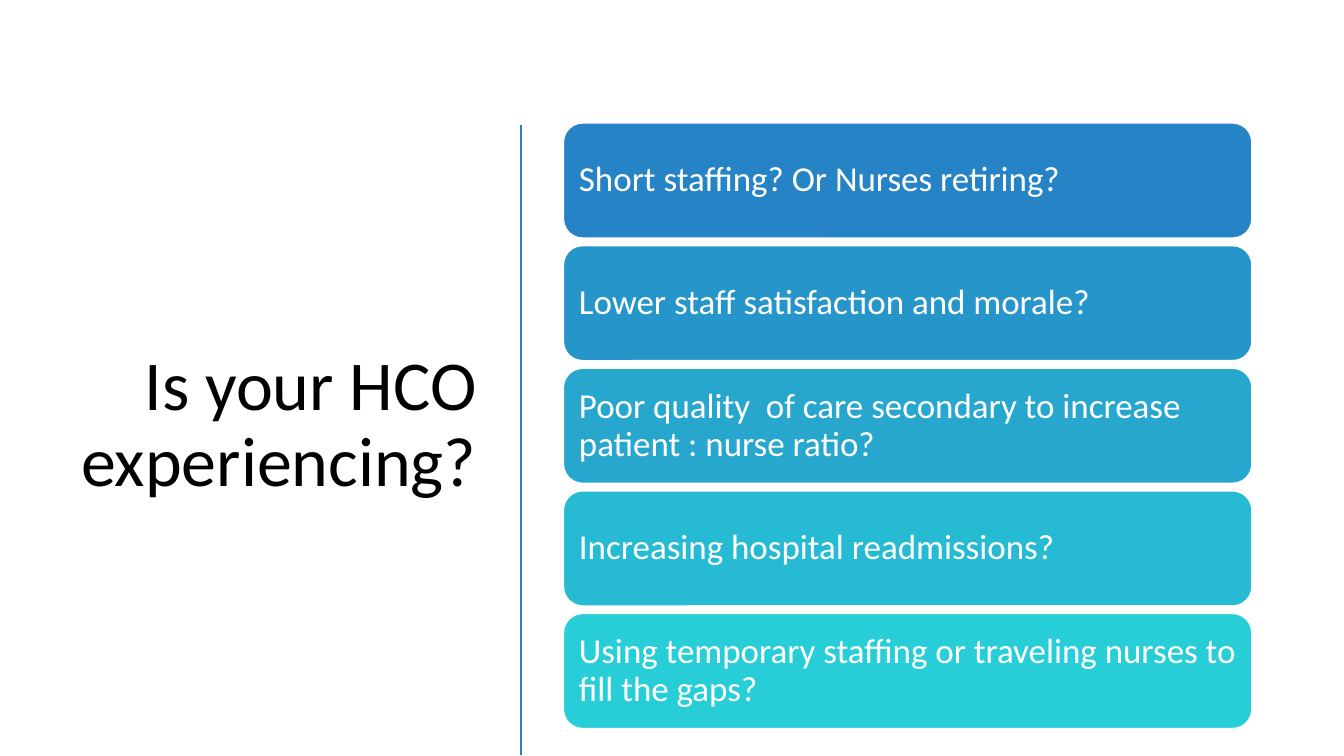
from dataclasses import dataclass

from lxml.etree import SubElement
from pptx import Presentation
from pptx.dml.color import RGBColor
from pptx.enum.shapes import MSO_CONNECTOR, MSO_SHAPE
from pptx.enum.text import MSO_ANCHOR as Anchor, PP_ALIGN as Align
from pptx.oxml.ns import qn
from pptx.util import Cm, Pt


@dataclass(frozen=True)
class Theme:
    font: str = "Calibri"
    title_size: int = 50
    card_size: int = 25
    title_color: str = "000000"
    card_text: str = "FFFFFF"
    card_border: str = "FFFFFF"
    divider: str = "2683C6"
    card_fills: tuple = ("2683C6", "2695CA", "27A7CE", "27BAD3", "27CED7")


THEME = Theme()

QUESTIONS = (
    "Short staffing? Or Nurses retiring?",
    "Lower staff satisfaction and morale?",
    "Poor quality  of care secondary to increase patient : nurse ratio?",
    "Increasing hospital readmissions?",
    "Using temporary staffing or traveling nurses to fill the gaps?",
)

CARD_LEFT, CARD_TOP = 14.2, 3.1
CARD_WIDTH, CARD_HEIGHT = 17.35, 2.9
CARD_PITCH = 3.09


def write_text(holder, text, *, size, color, align=Align.LEFT, inset=0.25):
    frame = holder.text_frame
    frame.word_wrap = True
    frame.vertical_anchor = Anchor.MIDDLE
    frame.margin_left = frame.margin_right = Cm(inset)
    paragraph = frame.paragraphs[0]
    paragraph.text = text
    paragraph.alignment = align
    paragraph.line_spacing = 0.9
    paragraph.font.name = THEME.font
    paragraph.font.size = Pt(size)
    paragraph.font.color.rgb = RGBColor.from_string(color)


def add_title(slide, text):
    title = slide.shapes.add_textbox(Cm(1.32), Cm(2.97), Cm(10.95), Cm(15.52))
    write_text(title, text, size=THEME.title_size, color=THEME.title_color,
               align=Align.RIGHT)


def add_divider(slide):
    divider = slide.shapes.add_connector(
        MSO_CONNECTOR.STRAIGHT, Cm(13.13), Cm(3.15), Cm(13.13), Cm(19.02))
    divider.line.color.rgb = RGBColor.from_string(THEME.divider)
    divider.line.width = Pt(2)
    SubElement(divider._element.spPr, qn("a:effectLst"))


def add_card(slide, top, question, fill):
    card = slide.shapes.add_shape(
        MSO_SHAPE.ROUNDED_RECTANGLE,
        Cm(CARD_LEFT), Cm(top), Cm(CARD_WIDTH), Cm(CARD_HEIGHT))
    card.shadow.inherit = False
    card.fill.solid()
    card.fill.fore_color.rgb = RGBColor.from_string(fill)
    card.line.color.rgb = RGBColor.from_string(THEME.card_border)
    card.line.width = Pt(1)
    # The rounded corners already inset the text by 0.14 cm.
    write_text(card, question, size=THEME.card_size, color=THEME.card_text)


def main():
    deck = Presentation()
    deck.slide_width, deck.slide_height = Cm(33.87), Cm(19.05)
    slide = deck.slides.add_slide(deck.slide_layouts[6])

    add_title(slide, "Is your HCO experiencing?")
    add_divider(slide)
    for row, (question, fill) in enumerate(zip(QUESTIONS, THEME.card_fills)):
        add_card(slide, CARD_TOP + row * CARD_PITCH, question, fill)

    deck.save("out.pptx")


if __name__ == "__main__":
    main()
